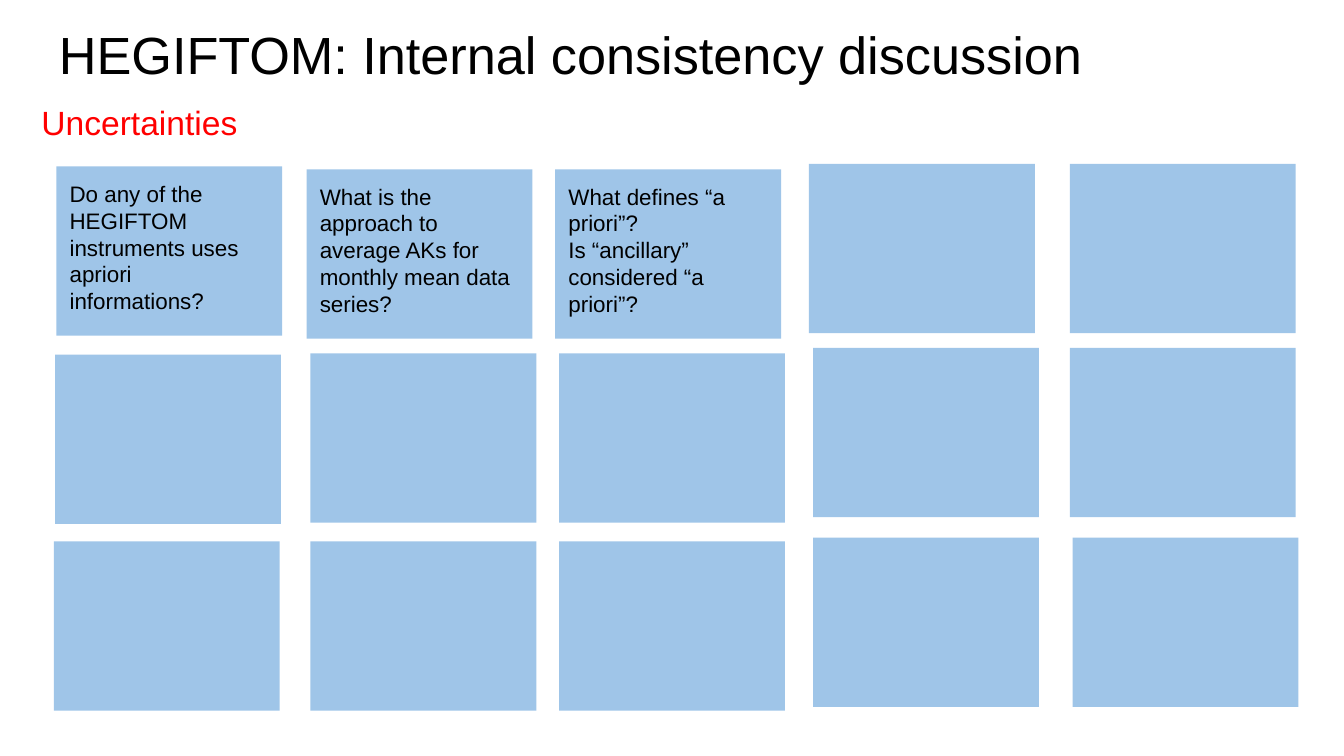
import pptx
import pptx.dml.color
import pptx.enum.shapes
import pptx.enum.text
import pptx.util

Pt = pptx.util.Pt
RGBColor = pptx.dml.color.RGBColor

CARD_BLUE = RGBColor(0x9F, 0xC5, 0xE8)
BLACK = RGBColor(0, 0, 0)
RED = RGBColor(0xFF, 0, 0)

CARD_WIDTH, CARD_HEIGHT = 121, 90.7
CARD_OFFSETS = [
    [(1.4, 1.4), (135.4, 2.9), (268.6, 2.9), (404.6, 0), (544.3, 0)],
    [(0.7, 102.2), (137.5, 101.5), (270.7, 101.5), (406.8, 98.6), (544.3, 98.6)],
    [(0, 202.3), (137.5, 202.3), (270.7, 202.3), (406.8, 200.2), (545.8, 200.2)],
]
QUESTIONS = [
    ["Do any of the HEGIFTOM instruments uses apriori informations?"],
    ["What is the approach to average AKs for monthly mean data series?"],
    ["What defines “a priori”?", "Is “ancillary” considered “a priori”?"],
]


def write_text(frame, lines, size, color):
    frame.word_wrap = True
    frame.vertical_anchor = pptx.enum.text.MSO_ANCHOR.TOP
    frame.margin_left = frame.margin_right = Pt(7.2)
    frame.margin_top = frame.margin_bottom = Pt(7.2)
    frame.text = "\n".join(lines)
    for paragraph in frame.paragraphs:
        paragraph.alignment = pptx.enum.text.PP_ALIGN.LEFT
        paragraph.font.name = "Arial"
        paragraph.font.size = Pt(size)
        paragraph.font.color.rgb = color


def add_heading(slide, left, top, width, height, text, size, color):
    heading = slide.shapes.add_textbox(Pt(left), Pt(top), Pt(width), Pt(height))
    write_text(heading.text_frame, [text], size, color)


def add_card(slide, left, top, question):
    card = slide.shapes.add_shape(
        pptx.enum.shapes.MSO_SHAPE.RECTANGLE,
        Pt(left), Pt(top), Pt(CARD_WIDTH), Pt(CARD_HEIGHT))
    card.shadow.inherit = False
    card.fill.solid()
    card.fill.fore_color.rgb = CARD_BLUE
    card.line.fill.background()
    if question:
        write_text(card.text_frame, question, 12, BLACK)


def add_question_board(slide, left, top):
    for row, offsets in enumerate(CARD_OFFSETS):
        for column, (dx, dy) in enumerate(offsets):
            has_question = row == 0 and column < len(QUESTIONS)
            question = QUESTIONS[column] if has_question else None
            add_card(slide, left + dx, top + dy, question)


def main():
    presentation = pptx.Presentation()
    presentation.slide_width = Pt(720)
    presentation.slide_height = Pt(405)
    slide = presentation.slides.add_slide(presentation.slide_layouts[6])
    add_question_board(slide, 28.8, 87.8)
    add_heading(slide, 24.5, 5, 671, 45.4,
                "HEGIFTOM: Internal consistency discussion", 28, BLACK)
    add_heading(slide, 15.1, 47.5, 292.3, 33.8, "Uncertainties", 18, RED)
    presentation.save("out.pptx")


if __name__ == "__main__":
    main()
